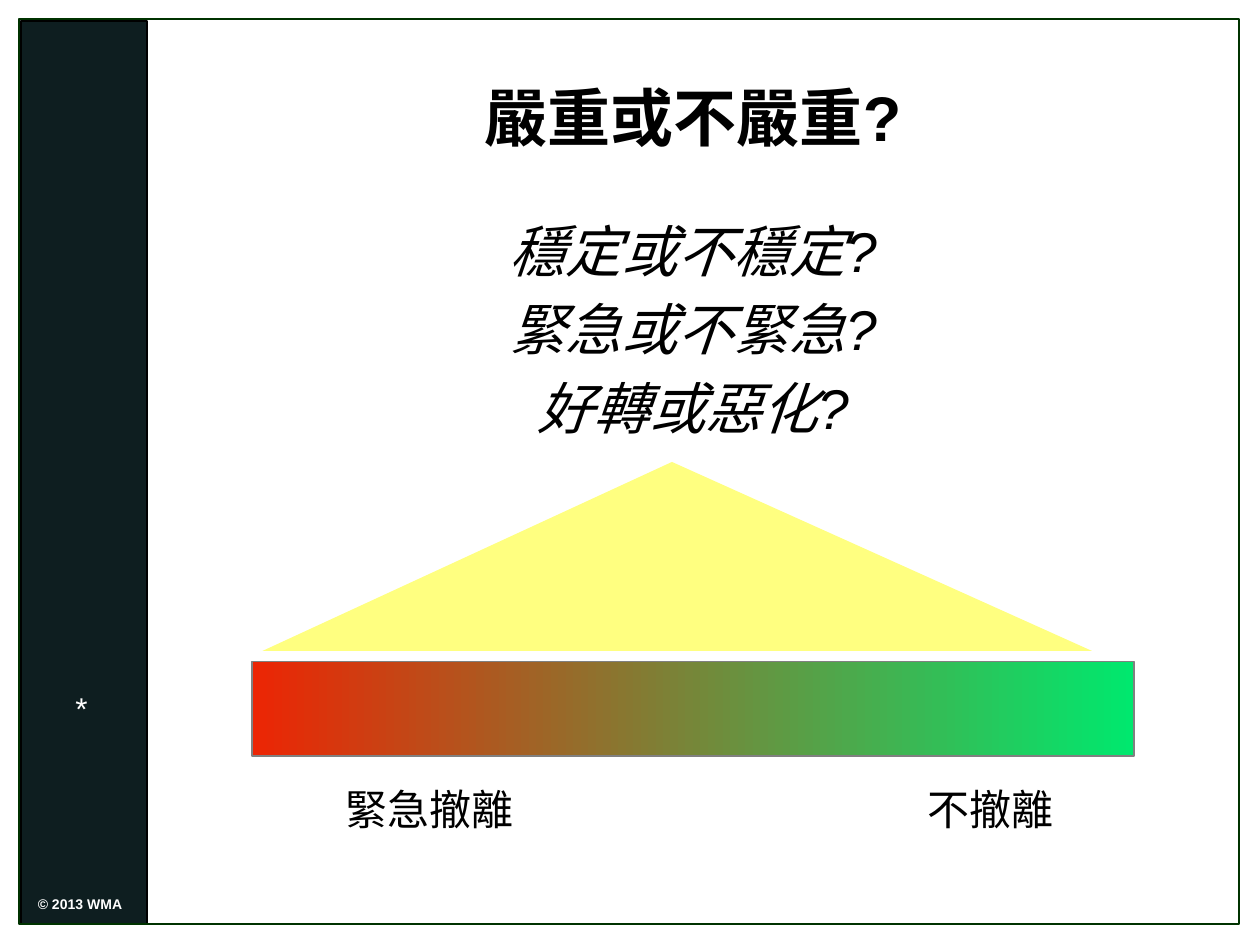
import pptx
import pptx.util
import pptx.dml.color
import pptx.enum.shapes
import pptx.enum.text
import pptx.oxml

SHAPES = pptx.enum.shapes.MSO_SHAPE
ALIGN = pptx.enum.text.PP_ALIGN
ANCHOR = pptx.enum.text.MSO_ANCHOR
NS = 'xmlns:a="http://schemas.openxmlformats.org/drawingml/2006/main"'

deck = pptx.Presentation()
deck.slide_width = pptx.util.Inches(10)
deck.slide_height = pptx.util.Inches(7.5)
page = deck.slides.add_slide(deck.slide_layouts[6])

# Grid of 120 columns by 90 rows with square cells
CELL = deck.slide_width / 120


def rgb(value):
    return pptx.dml.color.RGBColor.from_string(value)


def add_text(place, lines, size, color="000000", font="Arial", align=ALIGN.LEFT, bold=False, italic=False):
    box = page.shapes.add_textbox(*[round(v * CELL) for v in place])
    frame = box.text_frame
    frame.word_wrap = True
    frame.text = "\n".join(lines)
    for para in frame.paragraphs:
        para.alignment = align
        for span in para.runs:
            span.font.name = font
            span.font.size = pptx.util.Pt(size)
            span.font.bold = bold
            span.font.italic = italic
            span.font.color.rgb = rgb(color)
    return frame


# Side band, page border and severity scale: place, fill, line, line width
blocks = [
    ((2, 2, 12, 86), "0E1E20", "000000", 1),
    ((1.8, 1.8, 116.2, 86.2), None, "003300", 1.5),
    ((24, 63, 84, 9), ("00E86E", "EC2504"), "808080", 1),
]
for place, fill, line, width in blocks:
    block = page.shapes.add_shape(SHAPES.RECTANGLE, *[round(v * CELL) for v in place])
    block.shadow.inherit = False
    block.line.color.rgb = rgb(line)
    block.line.width = pptx.util.Pt(width)
    if fill is None:
        block.fill.background()
    elif isinstance(fill, tuple):
        block.fill.gradient()
        block.fill.gradient_angle = 180
        for stop, color, position in zip(block.fill.gradient_stops, fill, (0, 1)):
            stop.color.rgb = rgb(color)
            stop.position = position
    else:
        block.fill.solid()
        block.fill.fore_color.rgb = rgb(fill)

# Yellow triangle above the scale
outline = page.shapes.build_freeform(25.2, 62.4, scale=CELL)
outline.add_line_segments([(103.9, 62.4), (64.3, 44.4)], close=True)
triangle = outline.convert_to_shape()
triangle.shadow.inherit = False
triangle.fill.solid()
triangle.fill.fore_color.rgb = rgb("FFFF80")
triangle.line.fill.background()

# Title and questions
title = add_text((20, 3.6, 92, 15), ["嚴重或不嚴重?"], 36, align=ALIGN.CENTER, bold=True)
title.vertical_anchor = ANCHOR.MIDDLE
questions = add_text((24, 20, 84, 21), ["穩定或不穩定?", "緊急或不緊急?", "好轉或惡化?"],
                     32, align=ALIGN.CENTER, italic=True)
for para in questions.paragraphs[1:]:
    para.space_before = pptx.util.Pt(6.4)

# Scale labels, the second one at a tab stop
labels = add_text((22, 74, 89, 6), ["緊急撤離\t不撤離"], 24, font="Roboto")
labels.margin_left = round(10.9 * CELL)
tab_list = pptx.oxml.parse_xml(
    f'<a:tabLst {NS}><a:tab pos="{round(55.4 * CELL)}" algn="l"/></a:tabLst>')
labels.paragraphs[0]._p.get_or_add_pPr().append(tab_list)

# Side band texts
add_text((6, 65, 3, 5), ["*"], 18, "FFFFFF")
notice = add_text((3, 85, 10, 3), ["© 2013 WMA"], 8, "FFFFFF", bold=True)
notice.margin_left = pptx.util.Inches(0.05)
notice.margin_right = pptx.util.Inches(0.02)
notice.margin_top = notice.margin_bottom = pptx.util.Inches(0.03)
notice.paragraphs[0].line_spacing = pptx.util.Pt(9.1)

deck.save("out.pptx")
